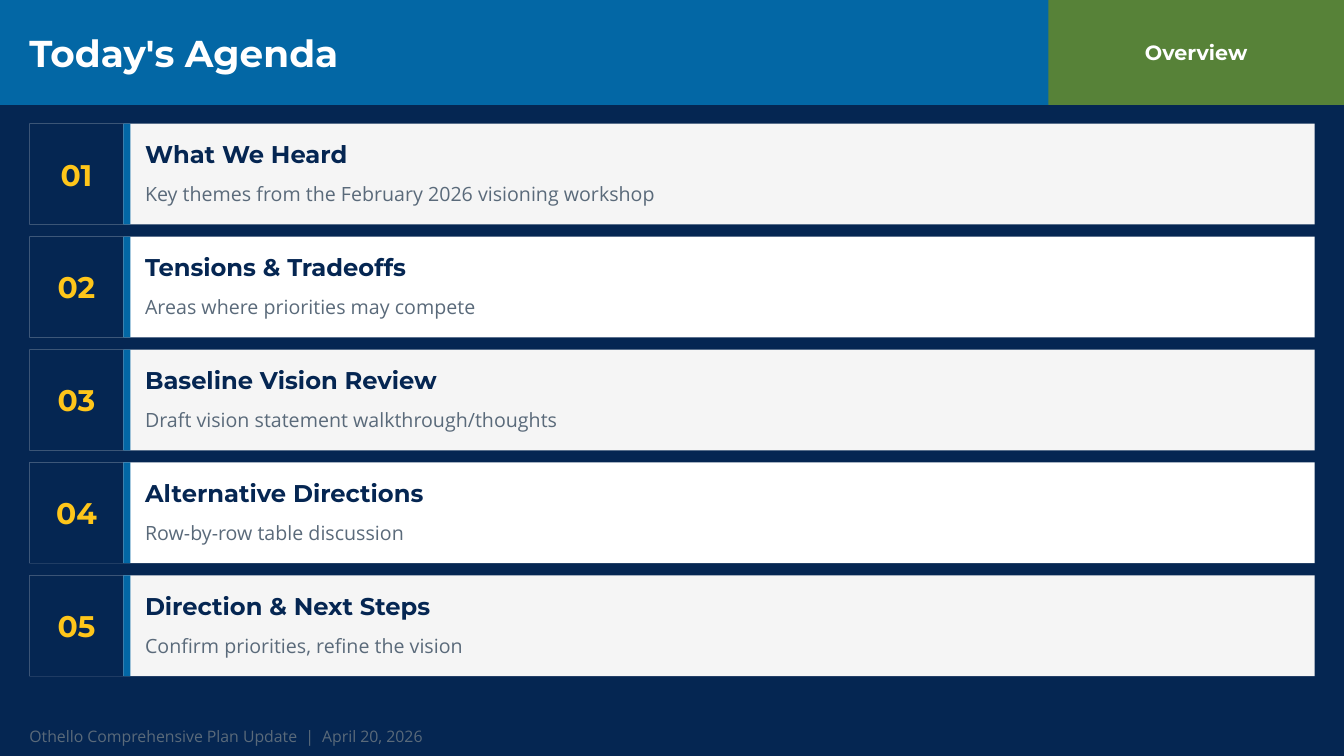
from dataclasses import dataclass

from pptx import Presentation
from pptx import util as u
from pptx.dml import color
from pptx.enum import shapes, text


@dataclass(frozen=True)
class Theme:
    navy: str = "052652"
    blue: str = "0367A5"
    green: str = "578238"
    gold: str = "FFC61A"
    white: str = "FFFFFF"
    pale: str = "F5F5F5"
    slate: str = "5A6A7A"
    heading_font: str = "Montserrat"
    body_font: str = "Open Sans"
    title_size: float = 26.7
    number_size: float = 21.3
    topic_size: float = 17.3
    tag_size: float = 14.7
    detail_size: float = 14
    footer_size: float = 11.3


def write(shape, words, *, size, ink, font, bold=False, centred=False):
    """Fill a shape with one unpadded, vertically centred paragraph."""
    frame = shape.text_frame
    frame.word_wrap = True
    frame.vertical_anchor = text.MSO_ANCHOR.MIDDLE
    frame.margin_left = frame.margin_top = 0
    frame.margin_right = frame.margin_bottom = 0
    para = frame.paragraphs[0]
    para.alignment = text.PP_ALIGN.CENTER if centred else text.PP_ALIGN.LEFT
    span = para.add_run()
    span.text = words
    span.font.name = font
    span.font.size = u.Pt(size)
    span.font.bold = bold
    span.font.color.rgb = color.RGBColor.from_string(ink)


class AgendaSlide:
    def __init__(self, page, theme):
        self.page = page
        self.theme = theme

    def background(self, fill):
        backdrop = self.page.background.fill
        backdrop.solid()
        backdrop.fore_color.rgb = color.RGBColor.from_string(fill)

    def block(self, left, top, width, height, fill):
        box = self.page.shapes.add_shape(
            shapes.MSO_SHAPE.RECTANGLE, *map(u.Pt, (left, top, width, height)))
        box.shadow.inherit = False
        box.fill.solid()
        box.fill.fore_color.rgb = color.RGBColor.from_string(fill)
        box.line.fill.background()
        return box

    def label(self, left, top, width, height, words, **style):
        box = self.page.shapes.add_textbox(*map(u.Pt, (left, top, width, height)))
        write(box, words, **style)

    def header(self, title, tag):
        theme = self.theme
        style = dict(ink=theme.white, font=theme.heading_font, bold=True)
        self.block(0, 0, SLIDE_WIDTH, HEADER_HEIGHT, theme.blue)
        self.label(MARGIN, 0, 720, HEADER_HEIGHT, title,
                   size=theme.title_size, **style)
        tag_box = self.block(SLIDE_WIDTH - TAG_WIDTH, 0, TAG_WIDTH,
                             HEADER_HEIGHT, theme.green)
        write(tag_box, tag, size=theme.tag_size, centred=True, **style)

    def agenda_row(self, index, topic, detail):
        theme = self.theme
        top = FIRST_ROW_TOP + index * ROW_STEP
        band = theme.white if index % 2 else theme.pale
        self.block(MARGIN, top, CONTENT_WIDTH, ROW_HEIGHT, band)
        number_box = self.block(MARGIN, top, NUMBER_WIDTH, ROW_HEIGHT, theme.navy)
        write(number_box, f"{index + 1:02}", size=theme.number_size,
              ink=theme.gold, font=theme.heading_font, bold=True, centred=True)
        self.block(MARGIN + NUMBER_WIDTH, top, 5, ROW_HEIGHT, theme.blue)
        self.label(TEXT_LEFT, top + 7.2, 432, 28.8, topic, size=theme.topic_size,
                   ink=theme.navy, font=theme.heading_font, bold=True)
        self.label(TEXT_LEFT, top + 38.4, 816, 23, detail, size=theme.detail_size,
                   ink=theme.slate, font=theme.body_font)

    def footer(self, words):
        theme = self.theme
        self.label(MARGIN, 516.4, CONTENT_WIDTH, 19.2, words,
                   size=theme.footer_size, ink=theme.slate, font=theme.body_font)


SLIDE_WIDTH, SLIDE_HEIGHT = 960, 540
MARGIN = 21
CONTENT_WIDTH = SLIDE_WIDTH - 2 * MARGIN
HEADER_HEIGHT = 75
TAG_WIDTH = 211.2
FIRST_ROW_TOP = 88.4
ROW_STEP = 80.64
ROW_HEIGHT = 72
NUMBER_WIDTH = 67.2
TEXT_LEFT = 103.6

AGENDA = [
    ("What We Heard", "Key themes from the February 2026 visioning workshop"),
    ("Tensions & Tradeoffs", "Areas where priorities may compete"),
    ("Baseline Vision Review", "Draft vision statement walkthrough/thoughts"),
    ("Alternative Directions", "Row-by-row table discussion"),
    ("Direction & Next Steps", "Confirm priorities, refine the vision"),
]


def main():
    deck = Presentation()
    deck.slide_width = u.Pt(SLIDE_WIDTH)
    deck.slide_height = u.Pt(SLIDE_HEIGHT)
    theme = Theme()
    slide = AgendaSlide(deck.slides.add_slide(deck.slide_layouts[6]), theme)
    slide.background(theme.navy)
    slide.header("Today's Agenda", "Overview")
    slide.footer("Othello Comprehensive Plan Update  |  April 20, 2026")
    for index, (topic, detail) in enumerate(AGENDA):
        slide.agenda_row(index, topic, detail)
    deck.save("out.pptx")


if __name__ == "__main__":
    main()
